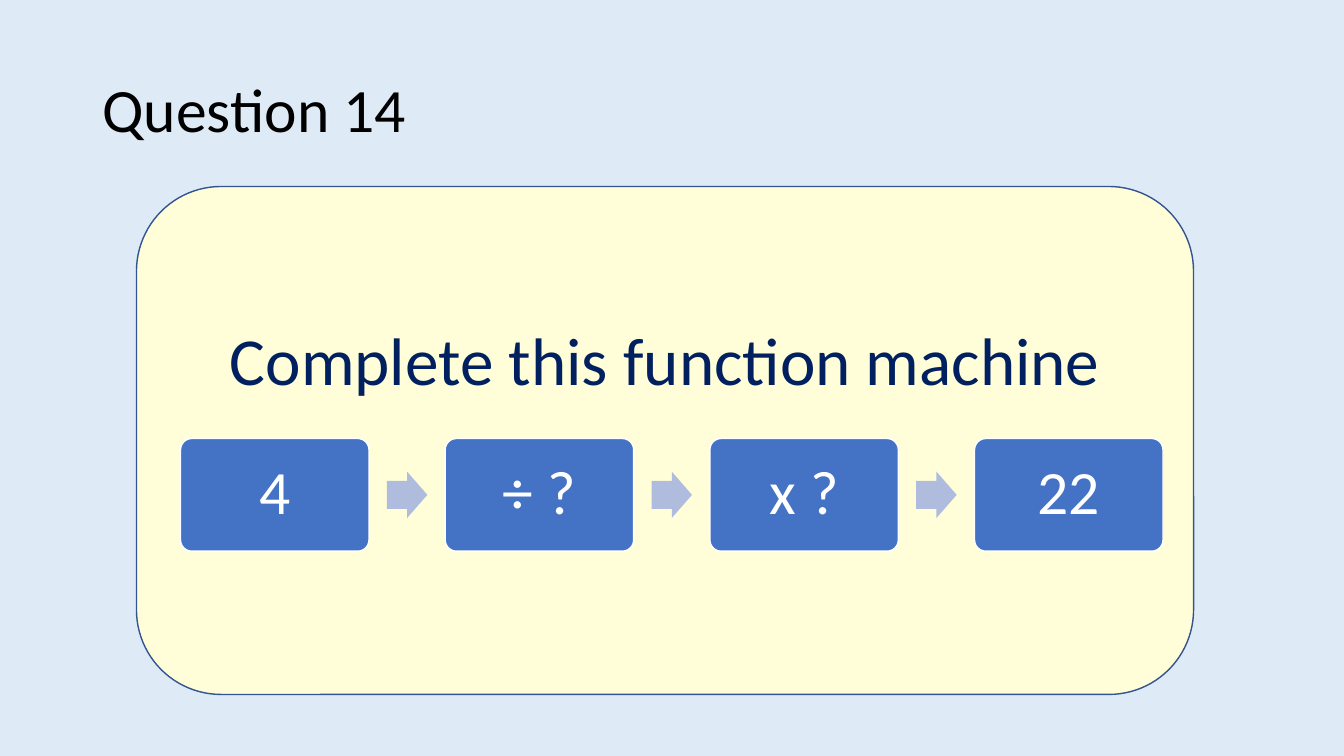
from pptx import Presentation
from pptx.dml.color import RGBColor
from pptx.enum.shapes import MSO_SHAPE as Shape
from pptx.enum.text import MSO_ANCHOR as Anchor, MSO_AUTO_SIZE as AutoSize, PP_ALIGN as Align
from pptx.util import Cm, Pt

STEPS = ["4", "÷ ?", "x ?", "22"]
BOX_LEFT, BOX_TOP, BOX_WIDTH, BOX_HEIGHT = 4.55, 11.05, 4.75, 2.84
PITCH = 6.67
ARROW_WIDTH, ARROW_HEIGHT = 1.02, 1.17


def colour(code):
    return RGBColor.from_string(code)


class QuestionSlide:
    font_name = "Calibri"

    def __init__(self, deck, background):
        self.page = deck.slides.add_slide(deck.slide_layouts[5])
        self.page.background.fill.solid()
        self.page.background.fill.fore_color.rgb = colour(background)

    def set_text(self, box, text, size, ink, align=Align.CENTER, spacing=1.0, bottom=0.13):
        """Fill a shape with one paragraph; bottom is the lower inset in cm."""
        frame = box.text_frame
        frame_format = {"word_wrap": True, "auto_size": AutoSize.NONE,
                        "vertical_anchor": Anchor.MIDDLE, "margin_bottom": Cm(bottom)}
        for name, value in frame_format.items():
            setattr(frame, name, value)
        para = frame.paragraphs[0]
        para.alignment, para.line_spacing = align, spacing
        span = para.add_run()
        span.text = text
        for name, value in {"name": self.font_name, "size": Pt(size)}.items():
            setattr(span.font, name, value)
        span.font.color.rgb = colour(ink)

    def title(self, text, *place):
        box = self.page.shapes.title
        for name, value in zip(("left", "top", "width", "height"), place):
            setattr(box, name, Cm(value))
        self.set_text(box, text, 44, "000000", Align.LEFT, 0.9)

    def shape(self, kind, place, fill, line=None, adjustments=()):
        box = self.page.shapes.add_shape(kind, *map(Cm, place))
        box.shadow.inherit = False
        box.fill.solid()
        box.fill.fore_color.rgb = colour(fill)
        if line:
            box.line.color.rgb = colour(line)
            box.line.width = Pt(1)
        else:
            box.line.fill.background()
        for index, value in enumerate(adjustments):
            box.adjustments[index] = value
        return box

    def panel(self, text, *place):
        box = self.shape(Shape.ROUNDED_RECTANGLE, place, "FFFED8", "325491")
        self.set_text(box, text, 48, "002060", bottom=4.26)

    def function_machine(self, steps):
        arrow_top = BOX_TOP + (BOX_HEIGHT - ARROW_HEIGHT) / 2
        arrow_offset = (PITCH + BOX_WIDTH - ARROW_WIDTH) / 2
        for index, step in enumerate(steps):
            left = BOX_LEFT + index * PITCH
            box = self.shape(Shape.ROUNDED_RECTANGLE, (left, BOX_TOP, BOX_WIDTH, BOX_HEIGHT),
                             "4472C4", "FFFFFF", [0.1])
            self.set_text(box, step, 44, "FFFFFF", spacing=0.9)
            if index < len(steps) - 1:
                self.shape(Shape.RIGHT_ARROW,
                           (left + arrow_offset, arrow_top, ARROW_WIDTH, ARROW_HEIGHT),
                           "B0BCDE", adjustments=[0.6, 0.5])


def main():
    deck = Presentation()
    deck.slide_width, deck.slide_height = Cm(33.87), Cm(19.05)
    slide = QuestionSlide(deck, "DEEBF7")
    slide.title("Question 14", 2.33, 1.01, 29.21, 3.68)
    slide.panel("Complete this function machine", 3.44, 4.7, 26.64, 12.8)
    slide.function_machine(STEPS)
    deck.save("out.pptx")


if __name__ == "__main__":
    main()
